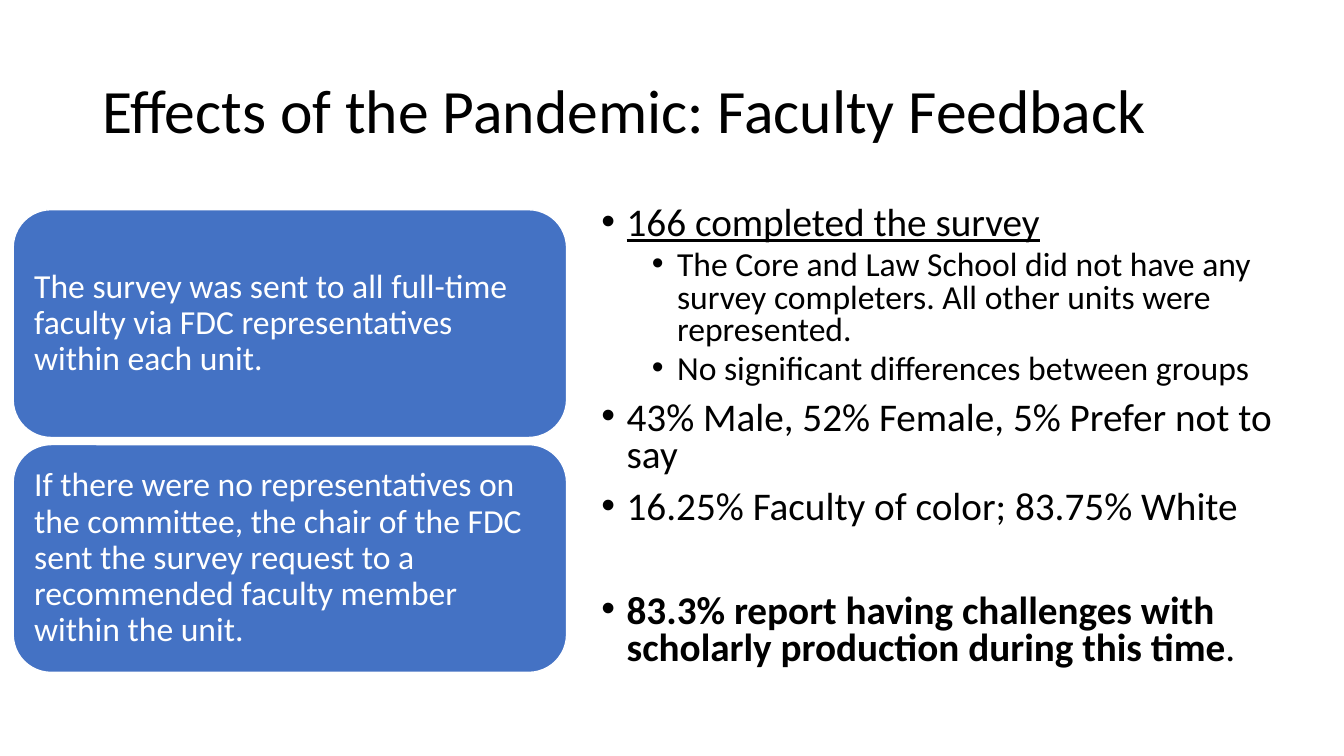
from lxml import etree
from pptx import Presentation
from pptx.dml.color import RGBColor
from pptx.enum import shapes, text
from pptx.oxml import ns
from pptx.util import Pt

FONT = "Calibri"
HUES = {"ink": "000000", "card": "4472C4", "white": "FFFFFF"}

CARDS = [
    "The survey was sent to all full-time faculty via FDC representatives "
    "within each unit.",
    "If there were no representatives on the committee, the chair of the FDC "
    "sent the survey request to a recommended faculty member within the unit.",
]

# Level, space before, wording
POINTS = [
    (0, 10, "166 completed the survey"),
    (1, 5, "The Core and Law School did not have any survey completers. "
           "All other units were represented."),
    (1, 5, "No significant differences between groups"),
    (0, 10, "43% Male, 52% Female, 5% Prefer not to say"),
    (0, 10, "16.25% Faculty of color; 83.75% White"),
    (0, 47, "83.3% report having challenges with scholarly production "
            "during this time"),
]


def hue(name):
    return RGBColor.from_string(HUES[name])


def style(para, size, color, pitch):
    para.line_spacing = pitch
    for run in para.runs:
        run.font.name = FONT
        run.font.size = Pt(size)
        run.font.color.rgb = hue(color)


def add_box(slide, left, top, width, height):
    box = slide.shapes.add_textbox(Pt(left), Pt(top), Pt(width), Pt(height))
    box.text_frame.word_wrap = True
    return box.text_frame


def add_title(slide, words):
    frame = add_box(slide, 66, 28.75, 828, 104.4)
    frame.vertical_anchor = text.MSO_ANCHOR.MIDDLE
    frame.text = words
    style(frame.paragraphs[0], 44, "ink", 0.9)


def add_card(slide, top, words):
    card = slide.shapes.add_shape(shapes.MSO_SHAPE.ROUNDED_RECTANGLE,
                                  Pt(9.4), Pt(top), Pt(395.3), Pt(162.7))
    card.shadow.inherit = False
    card.fill.solid()
    card.fill.fore_color.rgb = hue("card")
    card.line.color.rgb = hue("white")
    card.line.width = Pt(1)
    frame = card.text_frame
    frame.word_wrap = True
    frame.vertical_anchor = text.MSO_ANCHOR.MIDDLE
    frame.text = words
    frame.paragraphs[0].alignment = text.PP_ALIGN.LEFT
    style(frame.paragraphs[0], 24, "white", 0.9)


def add_bullet(para, level):
    props = para._p.get_or_add_pPr()
    props.set("marL", str(Pt(18 + 36 * level)))
    props.set("indent", str(Pt(-18)))
    etree.SubElement(props, ns.qn("a:buFont"), typeface="Arial")
    etree.SubElement(props, ns.qn("a:buChar"), char="•")


def add_points(slide, points):
    frame = add_box(slide, 422.6, 144, 513.4, 342.7)
    frame.text = "\n".join(words for _, _, words in points)
    paras = frame.paragraphs
    paras[-1].add_run().text = "."
    for para, (level, gap, _) in zip(paras, points):
        para.level = level
        para.space_before = Pt(gap)
        style(para, 28 - 4 * level, "ink", 0.8)
        add_bullet(para, level)
    paras[0].runs[0].font.underline = True
    paras[-1].runs[0].font.bold = True


def main():
    deck = Presentation()
    deck.slide_width, deck.slide_height = Pt(960), Pt(540)
    slide = deck.slides.add_slide(deck.slide_layouts[6])

    # Heading
    add_title(slide, "Effects of the Pandemic: Faculty Feedback")

    # How the survey was sent
    for row, words in enumerate(CARDS):
        add_card(slide, 149.8 + 167.8 * row, words)

    # Findings
    add_points(slide, POINTS)

    deck.save("out.pptx")


if __name__ == "__main__":
    main()
